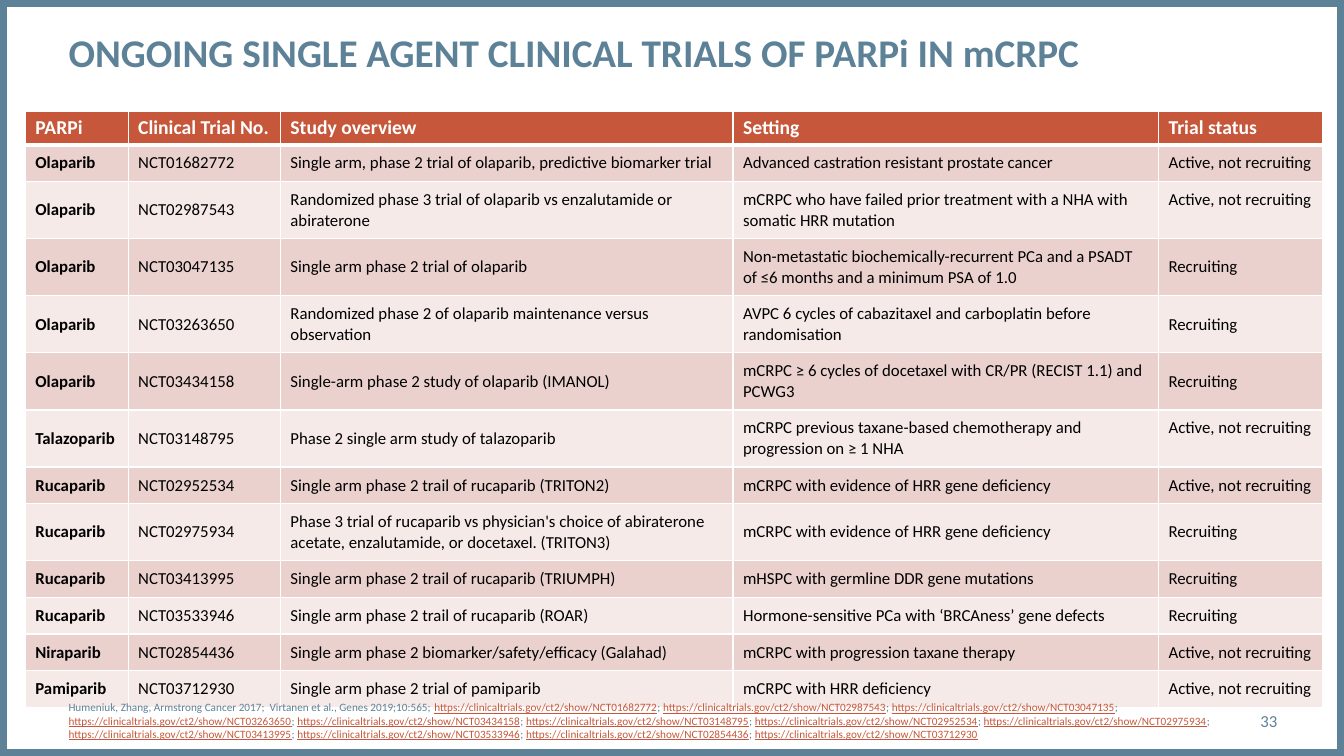
from dataclasses import dataclass

from lxml import etree
from pptx import Presentation
from pptx.dml.color import RGBColor
from pptx.enum.shapes import MSO_SHAPE
from pptx.enum.text import MSO_ANCHOR, MSO_AUTO_SIZE, PP_ALIGN
from pptx.oxml.ns import qn
from pptx.util import Inches, Pt

RECTANGLE = MSO_SHAPE.RECTANGLE
TOP, MIDDLE = MSO_ANCHOR.TOP, MSO_ANCHOR.MIDDLE
LEFT, RIGHT = PP_ALIGN.LEFT, PP_ALIGN.RIGHT
NO_AUTOFIT = MSO_AUTO_SIZE.NONE

WIDTH, HEIGHT = Inches(13.33), Inches(7.5)
FONT = "Calibri"
BLUE, RUST, WHITE, BLACK = "5D8298", "C6573B", "FFFFFF", "000000"
BANDS = ("EAD1CE", "F5EAE8")


@dataclass(frozen=True)
class Box:
    """A place on the slide, in percent of its width and height."""
    left: float
    top: float
    width: float
    height: float


@dataclass(frozen=True)
class Trial:
    drug: str
    number: str
    overview: str
    setting: str
    status: str
    lines: int = 1


ACTIVE, RECRUITING = "Active, not recruiting", "Recruiting"
HEADINGS = ("PARPi", "Clinical Trial No.", "Study overview", "Setting", "Trial status")
TRIALS = (
    Trial("Olaparib", "NCT01682772",
          "Single arm, phase 2 trial of olaparib, predictive biomarker trial",
          "Advanced castration resistant prostate cancer", ACTIVE),
    Trial("Olaparib", "NCT02987543",
          "Randomized phase 3 trial of olaparib vs enzalutamide or abiraterone",
          "mCRPC who have failed prior treatment with a NHA with somatic HRR mutation",
          ACTIVE, 2),
    Trial("Olaparib", "NCT03047135", "Single arm phase 2 trial of olaparib",
          "Non-metastatic biochemically-recurrent PCa and a PSADT of ≤6 months "
          "and a minimum PSA of 1.0", RECRUITING, 2),
    Trial("Olaparib", "NCT03263650",
          "Randomized phase 2 of olaparib maintenance versus observation",
          "AVPC 6 cycles of cabazitaxel and carboplatin before randomisation",
          RECRUITING, 2),
    Trial("Olaparib", "NCT03434158", "Single-arm phase 2 study of olaparib (IMANOL)",
          "mCRPC ≥ 6 cycles of docetaxel with CR/PR (RECIST 1.1) and PCWG3",
          RECRUITING, 2),
    Trial("Talazoparib", "NCT03148795", "Phase 2 single arm study of talazoparib",
          "mCRPC previous taxane-based chemotherapy and progression on ≥ 1 NHA",
          ACTIVE, 2),
    Trial("Rucaparib", "NCT02952534", "Single arm phase 2 trail of rucaparib (TRITON2)",
          "mCRPC with evidence of HRR gene deficiency", ACTIVE),
    Trial("Rucaparib", "NCT02975934",
          "Phase 3 trial of rucaparib vs physician's choice of abiraterone acetate, "
          "enzalutamide, or docetaxel. (TRITON3)",
          "mCRPC with evidence of HRR gene deficiency", RECRUITING, 2),
    Trial("Rucaparib", "NCT03413995", "Single arm phase 2 trail of rucaparib (TRIUMPH)",
          "mHSPC with germline DDR gene mutations", RECRUITING),
    Trial("Rucaparib", "NCT03533946", "Single arm phase 2 trail of rucaparib (ROAR)",
          "Hormone-sensitive PCa with ‘BRCAness’ gene defects", RECRUITING),
    Trial("Niraparib", "NCT02854436",
          "Single arm phase 2 biomarker/safety/efficacy (Galahad)",
          "mCRPC with progression taxane therapy", ACTIVE),
    Trial("Pamiparib", "NCT03712930", "Single arm phase 2 trial of pamiparib",
          "mCRPC with HRR deficiency", ACTIVE),
)
CITATIONS = "Humeniuk, Zhang, Armstrong Cancer 2017;  Virtanen et al., Genes 2019;10:565; "
TRIAL_URL = "https://clinicaltrials.gov/ct2/show/"

TITLE_BOX = Box(5.1, 3.73, 78.62, 12.53)
TABLE_BOX = Box(1.88, 14.67, 96.55, 78)
SOURCES_BOX = Box(5.1, 92.67, 91.6, 5.33)
NUMBER_BOX = Box(86.27, 92.67, 8.78, 5.33)
COLUMN_SHARES = (7.65, 11.33, 33.68, 31.66, 12.23)
HEADER_SHARE = 4.4
ROW_SHARES = {1: 4.8, 2: 7.47}


def color(value: str) -> RGBColor:
    return RGBColor.from_string(value)


def across(share: float) -> int:
    return round(WIDTH * share / 100)


def down(share: float) -> int:
    return round(HEIGHT * share / 100)


def bounds(box: Box) -> tuple[int, int, int, int]:
    return across(box.left), down(box.top), across(box.width), down(box.height)


def add_run(p, text: str, size: float, hex_color: str, **formats) -> None:
    r = p.add_run()
    r.text = text
    for name, value in {"name": FONT, "size": Pt(size), **formats}.items():
        setattr(r.font, name, value)
    r.font.color.rgb = color(hex_color)


def format_frame(tf, anchor, align):
    """Set a frame without insets and return its first paragraph."""
    formats = {"margin_left": 0, "margin_top": 0, "margin_right": 0, "margin_bottom": 0,
               "word_wrap": True, "auto_size": NO_AUTOFIT, "vertical_anchor": anchor}
    for name, value in formats.items():
        setattr(tf, name, value)
    p = tf.paragraphs[0]
    p.alignment = align
    return p


def add_frame(s) -> None:
    sp = s.shapes.add_shape(RECTANGLE, *bounds(Box(0, 0, 100, 100)))
    sp.shadow.inherit = False
    sp.fill.background()
    sp.line.color.rgb = color(BLUE)
    sp.line.width = Pt(10)


def add_title(s) -> None:
    sp = s.shapes.title
    sp.left, sp.top, sp.width, sp.height = bounds(TITLE_BOX)
    p = format_frame(sp.text_frame, TOP, LEFT)
    add_run(p, "ONGOING SINGLE AGENT CLINICAL TRIALS OF PARPi IN mCRPC", 28, BLUE, bold=True)


def set_borders(cell, **widths: float) -> None:
    """Draw white borders, 1 point wide unless a side (L, R, T, B) says otherwise."""
    properties = cell._tc.get_or_add_tcPr()
    for side in "LRTB":
        line = etree.SubElement(properties, qn(f"a:ln{side}"), w=str(Pt(widths.get(side, 1))))
        fill = etree.SubElement(line, qn("a:solidFill"))
        etree.SubElement(fill, qn("a:srgbClr"), val=WHITE)


def fill_cell(cell, text: str, fill: str, size: float, hex_color: str, bold: bool) -> None:
    cell.fill.solid()
    cell.fill.fore_color.rgb = color(fill)
    add_run(cell.text_frame.paragraphs[0], text, size, hex_color, bold=bold)


def add_trials_table(s) -> None:
    table = s.shapes.add_table(len(TRIALS) + 1, len(HEADINGS), *bounds(TABLE_BOX)).table
    table.horz_banding = False
    for column, share in zip(table.columns, COLUMN_SHARES):
        column.width = across(share)
    table.rows[0].height = down(HEADER_SHARE)
    for j, heading in enumerate(HEADINGS):
        set_borders(table.cell(0, j), B=3)
        fill_cell(table.cell(0, j), heading, RUST, 14, WHITE, True)
    for i, trial in enumerate(TRIALS, 1):
        table.rows[i].height = down(ROW_SHARES[trial.lines])
        texts = (trial.drug, trial.number, trial.overview, trial.setting, trial.status)
        for j, text in enumerate(texts):
            cell = table.cell(i, j)
            set_borders(cell, T=3 if i == 1 else 1)
            cell.margin_top = cell.margin_bottom = Inches(0.08)
            raised = text == ACTIVE and trial.lines == 2
            cell.vertical_anchor = TOP if raised else MIDDLE
            fill_cell(cell, text, BANDS[(i - 1) % 2], 12, BLACK, j == 0)


def add_sources(s) -> None:
    tf = s.shapes.add_textbox(*bounds(SOURCES_BOX)).text_frame
    p = format_frame(tf, MIDDLE, LEFT)
    add_run(p, CITATIONS, 8, BLUE)
    for i, trial in enumerate(TRIALS):
        if i:
            add_run(p, "; ", 8, BLUE)
        add_run(p, TRIAL_URL + trial.number, 8, RUST, underline=True)


def add_slide_number(s) -> None:
    tf = s.shapes.add_textbox(*bounds(NUMBER_BOX)).text_frame
    add_run(format_frame(tf, MIDDLE, RIGHT), "33", 12, BLUE)


def main() -> None:
    prs = Presentation()
    prs.slide_width, prs.slide_height = WIDTH, HEIGHT
    s = prs.slides.add_slide(prs.slide_layouts[5])
    add_frame(s)
    add_trials_table(s)
    add_title(s)
    add_sources(s)
    add_slide_number(s)
    prs.save("out.pptx")


if __name__ == "__main__":
    main()
